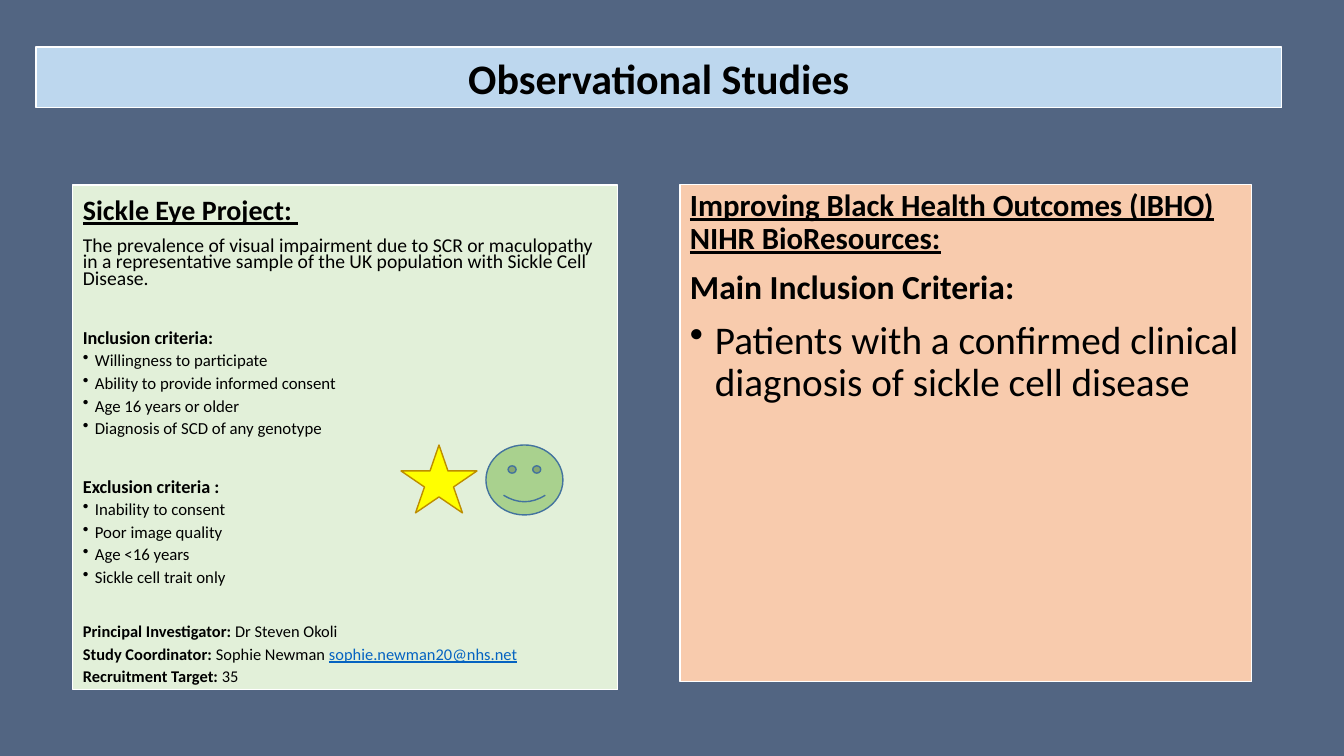
import pptx
import pptx.dml.color
import pptx.enum.shapes
import pptx.enum.text
import pptx.oxml
import pptx.oxml.ns
import pptx.util

SHAPES = pptx.enum.shapes.MSO_SHAPE
ANCHOR = pptx.enum.text.MSO_ANCHOR
ALIGN = pptx.enum.text.PP_ALIGN

SLIDE_WIDTH, SLIDE_HEIGHT = 1344, 756
EMU_PER_PX = 12192000 / SLIDE_WIDTH

COLOURS = {
    "background": "526582",
    "title": "BDD7EE",
    "eye_study": "E2F0D9",
    "ibho_study": "F8CBAD",
    "border": "FFFFFF",
    "text": "000000",
    "email": "0563C1",
    "star": "FFFF00",
    "star_edge": "BD8E00",
    "smiley": "A9D18E",
    "smiley_edge": "43739E",
}

PLAIN = {"bold": False, "underline": False}
BOLD = {"bold": True, "underline": False}
HEADING = {"bold": True, "underline": True}
EMAIL = {"bold": False, "underline": True}


def px(length):
    return pptx.util.Emu(round(length * EMU_PER_PX))


def rgb(name):
    return pptx.dml.color.RGBColor.from_string(COLOURS[name])


def apply_format(target, values):
    for name, value in values.items():
        setattr(target, name, value)


def paint(shape, fill, edge, edge_width):
    shape.fill.solid()
    shape.fill.fore_color.rgb = rgb(fill)
    shape.line.color.rgb = rgb(edge)
    shape.line.width = pptx.util.Pt(edge_width)


def add_figure(slide, kind, box, fill, edge, edge_width=1):
    figure = slide.shapes.add_shape(kind, *map(px, box))
    figure.shadow.inherit = False
    paint(figure, fill, edge, edge_width)
    return figure


def add_run(paragraph, text, size, style, colour="text"):
    run = paragraph.add_run()
    run.text = text
    apply_format(run.font, {"name": "Calibri", "size": pptx.util.Pt(size), **style})
    run.font.color.rgb = rgb(colour)


def add_bullet(paragraph, indent):
    properties = paragraph._p.get_or_add_pPr()
    properties.set("marL", str(px(indent)))
    properties.set("indent", str(-px(indent)))
    bullet = pptx.oxml.parse_xml(
        f'<a:buChar {pptx.oxml.ns.nsdecls("a")} char="•"/>'
    )
    properties.append(bullet)


def add_panel(slide, box, fill, anchor, line_spacing, paragraphs):
    panel = add_figure(slide, SHAPES.RECTANGLE, box, fill, "border", 0.75)
    frame = panel.text_frame
    apply_format(frame, {"word_wrap": True, "vertical_anchor": anchor})
    for number, (size, space_before, indent, runs) in enumerate(paragraphs):
        paragraph = frame.add_paragraph() if number else frame.paragraphs[0]
        apply_format(paragraph, {
            "alignment": ALIGN.LEFT,
            "line_spacing": line_spacing,
            "space_before": pptx.util.Pt(space_before),
        })
        if indent:
            add_bullet(paragraph, indent)
        for text, *style in runs:
            add_run(paragraph, text, size, *style)


def add_title(slide, box, text):
    title = slide.shapes.title
    places = dict(zip(("left", "top", "width", "height"), map(px, box)))
    apply_format(title, places)
    paint(title, "title", "border", 0.75)
    apply_format(title.text_frame, {
        "auto_size": pptx.enum.text.MSO_AUTO_SIZE.NONE,
        "vertical_anchor": ANCHOR.MIDDLE,
        "word_wrap": True,
    })
    paragraph = title.text_frame.paragraphs[0]
    apply_format(paragraph, {"alignment": ALIGN.CENTER, "line_spacing": 1.0})
    add_run(paragraph, text, 30, BOLD)


def criteria(heading, items):
    return [(13, 31, 0, [(heading, BOLD)])] + [
        (12, 6, 12, [(item, PLAIN)]) for item in items
    ]


def main():
    deck = pptx.Presentation()
    apply_format(deck, {"slide_width": px(SLIDE_WIDTH), "slide_height": px(SLIDE_HEIGHT)})
    slide = deck.slides.add_slide(deck.slide_layouts.get_by_name("Title Only"))
    slide.background.fill.solid()
    slide.background.fill.fore_color.rgb = rgb("background")

    add_title(slide, (36, 47, 1246, 61), "Observational Studies")

    eye_study = [
        (20, 10, 0, [("Sickle Eye Project: ", HEADING)]),
        (14, 10, 0, [(
            "The prevalence of visual impairment due to SCR or maculopathy in a "
            "representative sample of the UK population with Sickle Cell Disease.",
            PLAIN,
        )]),
        *criteria("Inclusion criteria:", [
            "Willingness to participate",
            "Ability to provide informed consent",
            "Age 16 years or older",
            "Diagnosis of SCD of any genotype",
        ]),
        *criteria("Exclusion criteria :", [
            "Inability to consent",
            "Poor image quality",
            "Age <16 years",
            "Sickle cell trait only",
        ]),
        (11.7, 29, 0, [("Principal Investigator: ", BOLD), ("Dr Steven Okoli", PLAIN)]),
        (11.7, 6, 0, [
            ("Study Coordinator: ", BOLD),
            ("Sophie Newman ", PLAIN),
            ("sophie.newman20@nhs.net", EMAIL, "email"),
        ]),
        (11.7, 6, 0, [("Recruitment Target: ", BOLD), ("35", PLAIN)]),
    ]
    add_panel(slide, (73, 185, 545, 505), "eye_study", ANCHOR.BOTTOM, 0.7, eye_study)

    ibho_study = [
        (22, 10, 0, [("Improving Black Health Outcomes (IBHO) NIHR BioResources:", HEADING)]),
        (24, 10, 0, [("Main Inclusion Criteria:", BOLD)]),
        (28, 10, 25, [(
            "Patients with a confirmed clinical diagnosis of sickle cell disease", PLAIN,
        )]),
    ]
    add_panel(slide, (680, 185, 572, 497), "ibho_study", ANCHOR.TOP, 0.9, ibho_study)

    add_figure(slide, SHAPES.STAR_5_POINT, (401, 445, 76, 68), "star", "star_edge")
    add_figure(slide, SHAPES.SMILEY_FACE, (486, 445, 77, 70), "smiley", "smiley_edge")

    deck.save("out.pptx")


if __name__ == "__main__":
    main()
